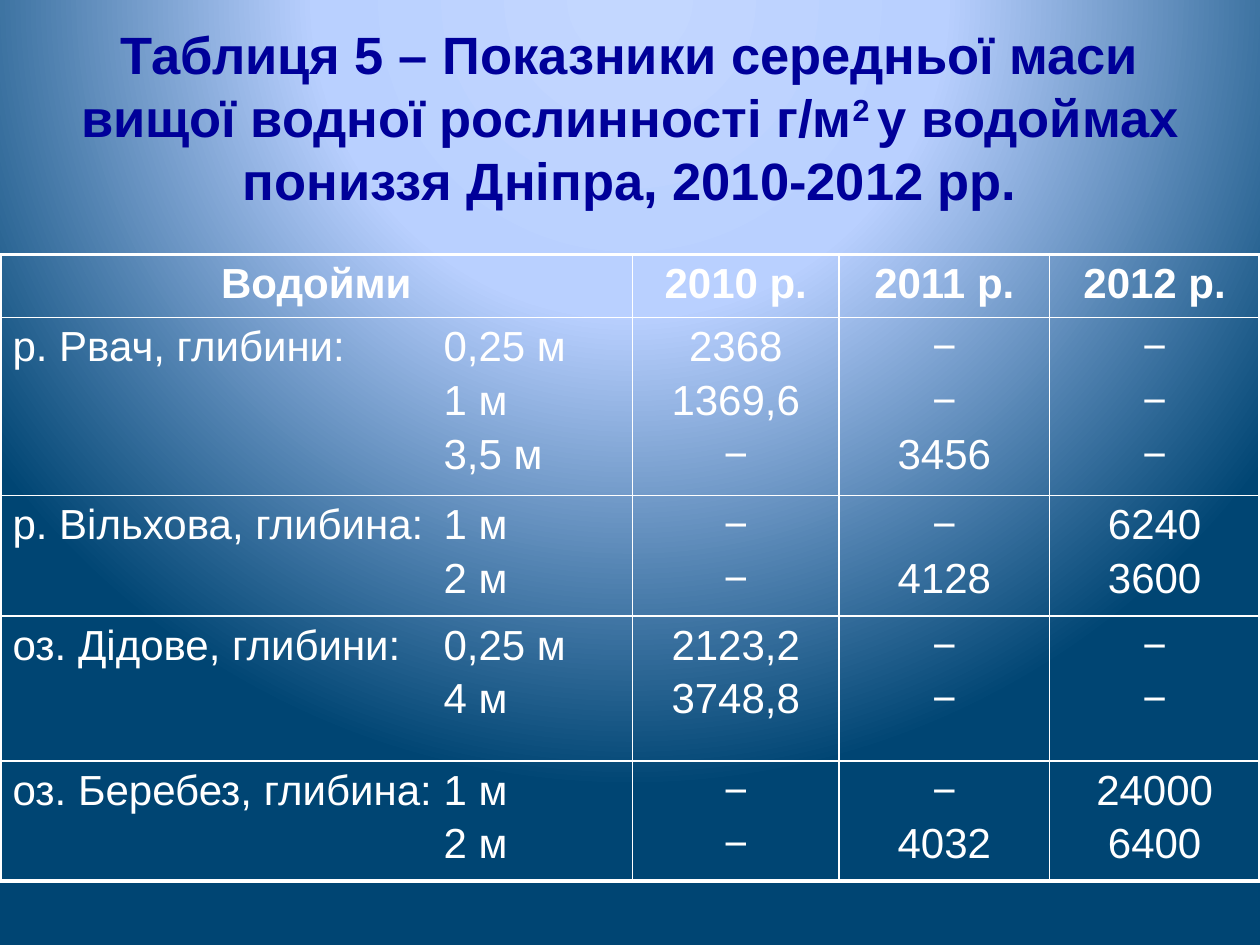
import pptx
import pptx.dml.color
import pptx.enum.text
import pptx.oxml
import pptx.oxml.ns
import pptx.util
from lxml import etree

Inches = pptx.util.Inches
Pt = pptx.util.Pt
qn = pptx.oxml.ns.qn
ALIGN = pptx.enum.text.PP_ALIGN
ANCHOR = pptx.enum.text.MSO_ANCHOR

COLORS = {"title": "000099", "text": "FFFFFF", "light": "C3D7FF", "middle": "B9D0FF", "deep": "004573"}
TITLE = [
    ("Таблиця 5 – Показники середньої маси вищої водної рослинності г/м", False),
    ("2 ", True),
    ("у водоймах пониззя Дніпра, 2010-2012 рр.", False),
]
COLUMNS = [5.02, 1.64, 1.67, 1.67]
HEIGHTS = [0.5, 1.35, 0.91, 1.15, 0.92]
ROWS = [
    ["Водойми", "2010 р.", "2011 р.", "2012 р."],
    ["р. Рвач, глибини:\t0,25 м\n1 м\n3,5 м", "2368\n1369,6\n−", "−\n−\n3456", "−\n−\n−"],
    ["р. Вільхова, глибина:\t1 м\n2 м", "−\n−", "−\n4128", "6240\n3600"],
    ["оз. Дідове, глибини:\t0,25 м\n4 м", "2123,2\n3748,8", "−\n−", "−\n−"],
    ["оз. Беребез, глибина:\t1 м\n2 м", "−\n−", "−\n4032", "24000\n6400"],
]


class Page:
    """Holds the style and the current slide."""

    font = "Arial"
    depth_stop = Inches(3.42)
    thin, thick = Pt(1), Pt(2.25)

    def __init__(self, deck):
        self.slide = deck.slides.add_slide(deck.slide_layouts[6])

    def style(self, span, size, color, bold):
        span.font.name = self.font
        span.font.size = Pt(size)
        span.font.bold = bold
        span.font.color.rgb = pptx.dml.color.RGBColor.from_string(COLORS[color])

    def background(self, stops):
        marks = "".join(
            f'<a:gs pos="{place * 1000}"><a:srgbClr val="{COLORS[name]}"/></a:gs>' for place, name in stops
        )
        backdrop = pptx.oxml.parse_xml(
            f'<p:bg {pptx.oxml.ns.nsdecls("p", "a")}><p:bgPr><a:gradFill rotWithShape="1">'
            f'<a:gsLst>{marks}</a:gsLst><a:path path="circle">'
            '<a:fillToRect l="50000" t="-80000" r="50000" b="180000"/></a:path>'
            "</a:gradFill><a:effectLst/></p:bgPr></p:bg>"
        )
        self.slide.element.cSld.insert(0, backdrop)

    def title(self, parts, left, top, width, height):
        box = self.slide.shapes.add_textbox(*map(Inches, (left, top, width, height)))
        frame = box.text_frame
        frame.word_wrap = True
        frame.vertical_anchor = ANCHOR.MIDDLE
        para = frame.paragraphs[0]
        para.alignment = ALIGN.CENTER
        for text, raised in parts:
            span = para.add_run()
            span.text = text
            self.style(span, 30, "title", True)
            if raised:
                span.font._element.set("baseline", "30000")

    def borders(self, cell, widths):
        properties = cell._tc.get_or_add_tcPr()
        for index, (side, width) in enumerate(zip("LRTB", widths)):
            line = etree.Element(qn(f"a:ln{side}"), w=str(width))
            fill = etree.SubElement(line, qn("a:solidFill"))
            etree.SubElement(fill, qn("a:srgbClr"), val=COLORS["text"])
            properties.insert(index, line)

    def depth_column(self, para, first):
        properties = para._p.get_or_add_pPr()
        if first:
            stops = etree.SubElement(properties, qn("a:tabLst"))
            etree.SubElement(stops, qn("a:tab"), pos=str(self.depth_stop), algn="l")
        else:
            properties.set("marL", str(self.depth_stop))
            properties.set("indent", "0")

    def cell(self, cell, text, header, label):
        cell.fill.background()
        cell.text_frame.text = text
        for index, para in enumerate(cell.text_frame.paragraphs):
            para.alignment = ALIGN.LEFT if label else ALIGN.CENTER
            para.space_before = Pt(4)
            if label:
                self.depth_column(para, index == 0)
            for span in para.runs:
                self.style(span, 24, "text", header)

    def table(self, rows, columns, heights, left, top):
        frame = self.slide.shapes.add_table(
            len(rows), len(columns), Inches(left), Inches(top), Inches(sum(columns)), Inches(sum(heights))
        )
        table = frame.table
        table.first_row = table.horz_banding = False
        for column, width in zip(table.columns, columns):
            column.width = Inches(width)
        last_row, last_column = len(rows) - 1, len(columns) - 1
        for r, texts in enumerate(rows):
            table.rows[r].height = Inches(heights[r])
            for c, text in enumerate(texts):
                cell = table.cell(r, c)
                self.cell(cell, text, r == 0, r > 0 and c == 0)
                outer = (c == 0, c == last_column, r == 0, r == last_row)
                self.borders(cell, [self.thick if edge else self.thin for edge in outer])


def main():
    deck = pptx.Presentation()
    deck.slide_width, deck.slide_height = Inches(10), Inches(7.5)
    page = Page(deck)
    page.background([(0, "light"), (40, "middle"), (100, "deep")])
    page.title(TITLE, 0.5, 0.3, 9, 1.25)
    page.table(ROWS, COLUMNS, HEIGHTS, 0, 2.02)
    deck.save("out.pptx")


if __name__ == "__main__":
    main()
